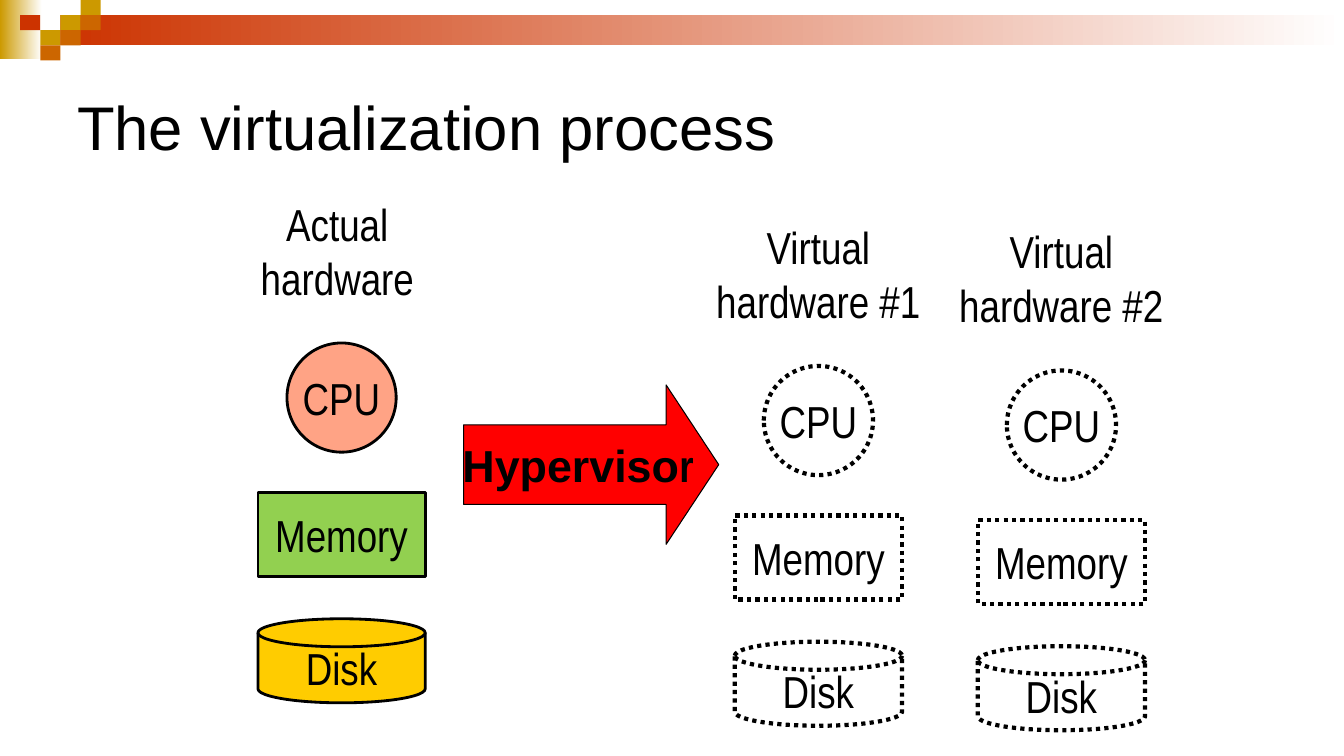
from pptx import Presentation
from pptx.dml.color import RGBColor
from pptx.enum import dml, shapes, text
from pptx.util import Pt

COLORS = {
    "black": "000000", "white": "FFFFFF", "gold": "CC9900", "brick": "CC3300",
    "orange": "CC6600", "salmon": "FFA385", "green": "92D050",
    "yellow": "FFCC00", "red": "FF0000",
}
BODY_FONT = "Arial Narrow"
TILE_W, TILE_H = 14.4, 10.8
TILES = [
    (3, 1, "gold"), (4, 0, "gold"), (4, 1, "orange"), (2, 2, "gold"),
    (1, 1, "brick"), (3, 2, "orange"), (2, 3, "orange"),
]
DEVICES = [
    ("CPU", shapes.MSO_SHAPE.OVAL, 108, 78, 78, "salmon"),
    ("Memory", shapes.MSO_SHAPE.RECTANGLE, 214.8, 119.5, 60, "green"),
    ("Disk", shapes.MSO_SHAPE.FLOWCHART_MAGNETIC_DISK, 305, 119.5, 60, "yellow"),
]
LABEL_W, LABEL_H = 185, 84.2


def rgb(name):
    return RGBColor.from_string(COLORS[name])


def write(shape, wording, font=BODY_FONT, size=32, bold=False, wrap=False,
          align=text.PP_ALIGN.CENTER, anchor=text.MSO_ANCHOR.MIDDLE):
    frame = shape.text_frame
    frame.word_wrap = wrap
    frame.vertical_anchor = anchor
    paragraph = frame.paragraphs[0]
    paragraph.alignment = align
    runs = [(wording, font)] if isinstance(wording, str) else wording
    for words, face in runs:
        run = paragraph.add_run()
        run.text = words
        run.font.name = face
        run.font.size = Pt(size)
        run.font.bold = bold
        run.font.color.rgb = rgb("black")


def add_box(parent, kind, left, top, width, height, fill=None, line=0, dotted=False):
    box = parent.add_shape(kind, Pt(left), Pt(top), Pt(width), Pt(height))
    box.shadow.inherit = False
    if fill:
        box.fill.solid()
        box.fill.fore_color.rgb = rgb(fill)
    else:
        box.fill.background()
    if line:
        box.line.color.rgb = rgb("black")
        box.line.width = Pt(line)
        if dotted:
            box.line.dash_style = dml.MSO_LINE.ROUND_DOT
    else:
        box.line.fill.background()
    return box


def add_fade(parent, color, left, top, width, height):
    band = add_box(parent, shapes.MSO_SHAPE.RECTANGLE, left, top, width, height)
    band.fill.gradient()
    band.fill.gradient_angle = 0
    for stop, position, name in zip(band.fill.gradient_stops, (0, 1), (color, "white")):
        stop.position = position
        stop.color.rgb = rgb(name)


def add_header(slide):
    header = slide.shapes.add_group_shape().shapes
    add_fade(header, "gold", 0, 0, 30, 42)
    add_fade(header, "brick", 43.2, TILE_H, 916.8, 21.6)
    for column, row, color in TILES:
        add_box(header, shapes.MSO_SHAPE.RECTANGLE, column * TILE_W, row * TILE_H,
                TILE_W, TILE_H, color)


def add_title(slide, wording):
    title = slide.shapes.add_textbox(Pt(48), Pt(36), Pt(864), Pt(108))
    write(title, wording, font="Arial", size=44, wrap=True, align=text.PP_ALIGN.LEFT)


def add_hardware(slide, label, center, top, virtual=True, label_shift=0):
    machine = slide.shapes.add_group_shape().shapes
    caption = machine.add_textbox(Pt(center + label_shift - LABEL_W / 2), Pt(top),
                                  Pt(LABEL_W), Pt(LABEL_H))
    write(caption, label, wrap=True, anchor=text.MSO_ANCHOR.TOP)
    for name, kind, offset, width, height, color in DEVICES:
        device = add_box(machine, kind, center - width / 2, top + offset, width, height,
                         fill=None if virtual else color,
                         line=3 if virtual else 2, dotted=virtual)
        write(device, name)


def add_hypervisor(slide):
    arrow = add_box(slide.shapes, shapes.MSO_SHAPE.RIGHT_ARROW, 331.2, 275, 182.2, 113.8,
                    fill="red", line=0.75)
    arrow.adjustments[0] = 0.5
    arrow.adjustments[1] = 0.33
    write(arrow, [("Hyperviso", "Arial"), ("r", BODY_FONT)], bold=True)


def main():
    deck = Presentation()
    deck.slide_width, deck.slide_height = Pt(960), Pt(540)
    slide = deck.slides.add_slide(deck.slide_layouts[6])
    add_header(slide)
    add_title(slide, "The virtualization process")
    add_hardware(slide, "Actual hardware", 244, 137, virtual=False, label_shift=-3)
    add_hardware(slide, "Virtual hardware #1", 584.6, 153.4)
    add_hypervisor(slide)
    add_hardware(slide, "Virtual hardware #2", 758.2, 156.6)
    deck.save("out.pptx")


if __name__ == "__main__":
    main()
